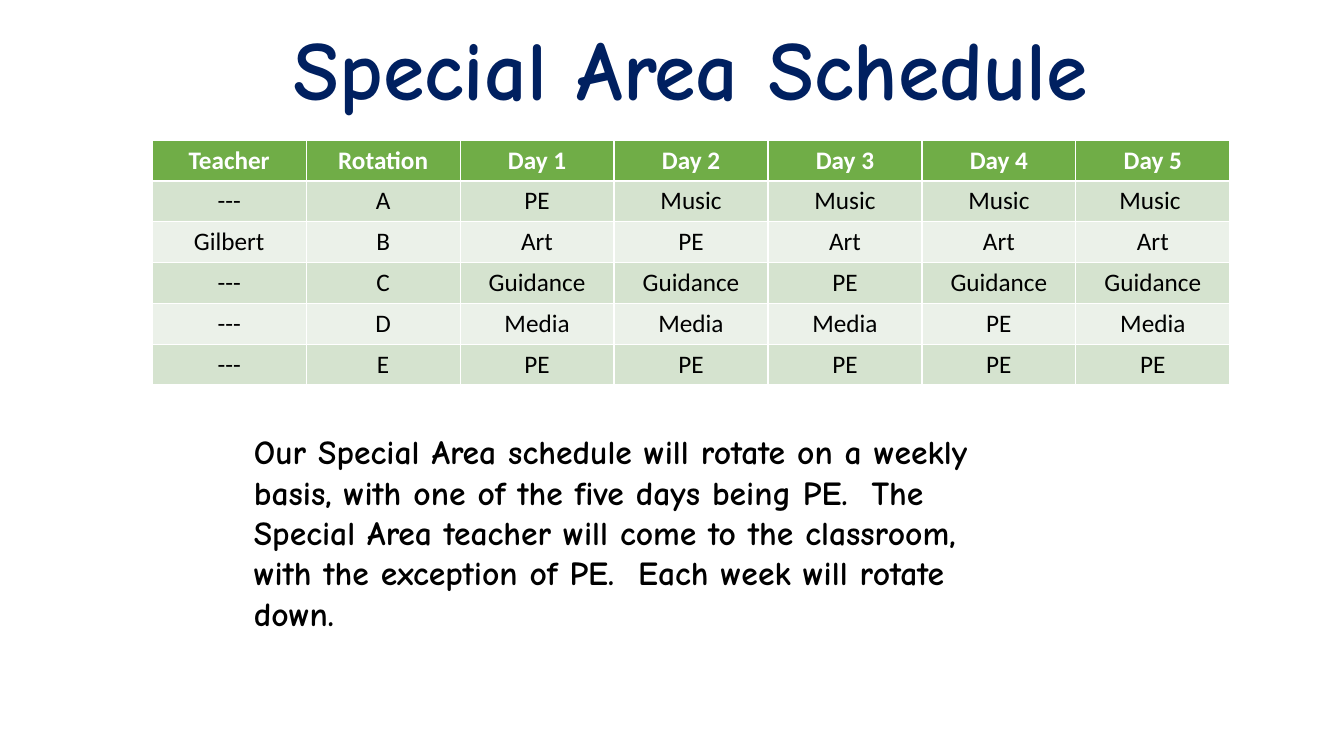
"""Build the Special Area Schedule slide."""
import pptx
import pptx.dml.color
import pptx.enum.text
import pptx.util

TITLE = "Special Area Schedule"
SCHEDULE = [
    ("Teacher", "Rotation", "Day 1", "Day 2", "Day 3", "Day 4", "Day 5"),
    ("---", "A", "PE", "Music", "Music", "Music", "Music "),
    ("Gilbert", "B", "Art", "PE", "Art", "Art", "Art"),
    ("---", "C", "Guidance", "Guidance", "PE", "Guidance", "Guidance"),
    ("---", "D", "Media", "Media", "Media", "PE", "Media"),
    ("---", "E", "PE", "PE", "PE", "PE", "PE"),
]
EXPLANATION = (
    "Our Special Area schedule will rotate on a weekly basis, with one of the "
    "five days being PE.  The Special Area teacher will come to the classroom, "
    "with the exception of PE.  Each week will rotate down."
)

NAVY = pptx.dml.color.RGBColor(0x00, 0x20, 0x60)
BLACK = pptx.dml.color.RGBColor(0x00, 0x00, 0x00)
WHITE = pptx.dml.color.RGBColor(0xFF, 0xFF, 0xFF)
GREEN = pptx.dml.color.RGBColor(0x70, 0xAD, 0x47)
BANDS = (
    pptx.dml.color.RGBColor(0xEB, 0xF1, 0xE9),
    pptx.dml.color.RGBColor(0xD5, 0xE3, 0xCF),
)
HAND_FONT, TABLE_FONT = "Comic Neue", "Calibri"
CENTER = pptx.enum.text.PP_ALIGN.CENTER
Inches = pptx.util.Inches
COLUMN_WIDTH, ROW_HEIGHT = Inches(1.527), Inches(0.405)


def style_paragraph(para, name, size, color, bold):
    para.font.name = name
    para.font.size = pptx.util.Pt(size)
    para.font.color.rgb = color
    para.font.bold = bold


def add_text(page, text, place, size, color):
    box = page.shapes.add_textbox(*map(Inches, place))
    box.text_frame.word_wrap = True
    para = box.text_frame.paragraphs[0]
    para.text = text
    style_paragraph(para, HAND_FONT, size, color, True)
    return box.text_frame


def add_schedule(page):
    rows, columns = len(SCHEDULE), len(SCHEDULE[0])
    table = page.shapes.add_table(
        rows, columns, Inches(1.51), Inches(1.39),
        COLUMN_WIDTH * columns, ROW_HEIGHT * rows,
    ).table
    for row, entries in enumerate(SCHEDULE):
        header = row == 0
        for column, entry in enumerate(entries):
            cell = table.cell(row, column)
            cell.text = entry
            cell.fill.solid()
            cell.fill.fore_color.rgb = GREEN if header else BANDS[row % 2]
            para = cell.text_frame.paragraphs[0]
            para.alignment = CENTER
            style_paragraph(para, TABLE_FONT, 18, WHITE if header else BLACK, header)


def main():
    deck = pptx.Presentation()
    deck.slide_width, deck.slide_height = Inches(13.33), Inches(7.5)
    page = deck.slides.add_slide(deck.slide_layouts[6])
    title = add_text(page, TITLE, (1.85, -0.19, 10, 1.42), 60, NAVY)
    title.vertical_anchor = pptx.enum.text.MSO_ANCHOR.BOTTOM
    title.paragraphs[0].alignment = CENTER
    title.paragraphs[0].line_spacing = 0.9
    add_schedule(page)
    explanation = add_text(page, EXPLANATION, (2.42, 4.23, 7.43, 2.12), 24, BLACK)
    explanation.auto_size = pptx.enum.text.MSO_AUTO_SIZE.SHAPE_TO_FIT_TEXT
    deck.save("out.pptx")


if __name__ == "__main__":
    main()
